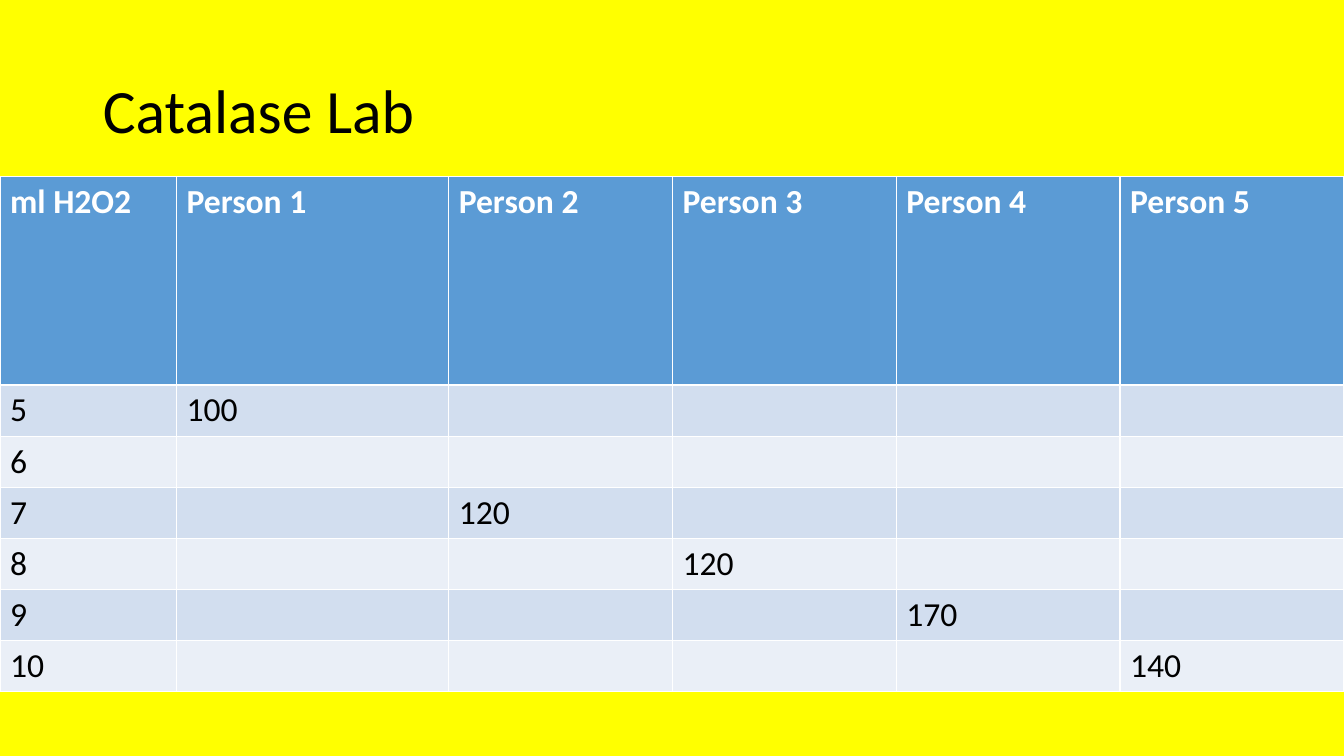
import pptx
import pptx.util
import pptx.dml.color
import pptx.enum.text

TITLE = "Catalase Lab"
HEADERS = ["ml H2O2", "Person 1", "Person 2", "Person 3", "Person 4", "Person 5"]
READINGS = [
    ("5", "100", "", "", "", ""),
    ("6", "", "", "", "", ""),
    ("7", "", "120", "", "", ""),
    ("8", "", "", "120", "", ""),
    ("9", "", "", "", "170", ""),
    ("10", "", "", "", "", "140"),
]
COLORS = {
    "background": "FFFF00",
    "header": "5B9BD5",
    "odd_band": "D2DEEF",
    "even_band": "EAEFF7",
    "header_text": "FFFFFF",
    "text": "000000",
}
FONT = "Calibri"
COLUMN_WIDTHS = [1.75, 2.7] + [2.22] * 4
ROW_HEIGHTS = [2.07] + [0.49] * len(READINGS)

Inches = pptx.util.Inches


def rgb(name):
    return pptx.dml.color.RGBColor.from_string(COLORS[name])


def style_font(paragraph, size, color, bold=False):
    font = paragraph.font
    font.name = FONT
    font.size = pptx.util.Pt(size)
    font.bold = bold
    font.color.rgb = rgb(color)


def add_title(slide):
    title = slide.shapes.title
    title.left, title.top = Inches(0.92), Inches(0.4)
    title.width, title.height = Inches(11.5), Inches(1.45)
    title.text_frame.text = TITLE
    title.text_frame.vertical_anchor = pptx.enum.text.MSO_ANCHOR.MIDDLE
    paragraph = title.text_frame.paragraphs[0]
    paragraph.alignment = pptx.enum.text.PP_ALIGN.LEFT
    paragraph.line_spacing = 0.9
    style_font(paragraph, 44, "text")


def add_readings_table(slide):
    rows = [HEADERS] + READINGS
    table = slide.shapes.add_table(
        len(rows), len(HEADERS), 0, Inches(1.75),
        Inches(sum(COLUMN_WIDTHS)), Inches(sum(ROW_HEIGHTS)),
    ).table
    for column, width in zip(table.columns, COLUMN_WIDTHS):
        column.width = Inches(width)
    for row_index, values in enumerate(rows):
        table.rows[row_index].height = Inches(ROW_HEIGHTS[row_index])
        is_header = row_index == 0
        band = "odd_band" if row_index % 2 else "even_band"
        for column_index, value in enumerate(values):
            cell = table.cell(row_index, column_index)
            cell.fill.solid()
            cell.fill.fore_color.rgb = rgb("header" if is_header else band)
            if value:
                cell.text = value
                style_font(cell.text_frame.paragraphs[0], 24,
                           "header_text" if is_header else "text", is_header)


def main():
    presentation = pptx.Presentation()
    presentation.slide_width = Inches(13.33)
    presentation.slide_height = Inches(7.5)
    slide = presentation.slides.add_slide(presentation.slide_layouts[5])
    slide.background.fill.solid()
    slide.background.fill.fore_color.rgb = rgb("background")
    add_title(slide)
    add_readings_table(slide)
    presentation.save("out.pptx")


if __name__ == "__main__":
    main()
